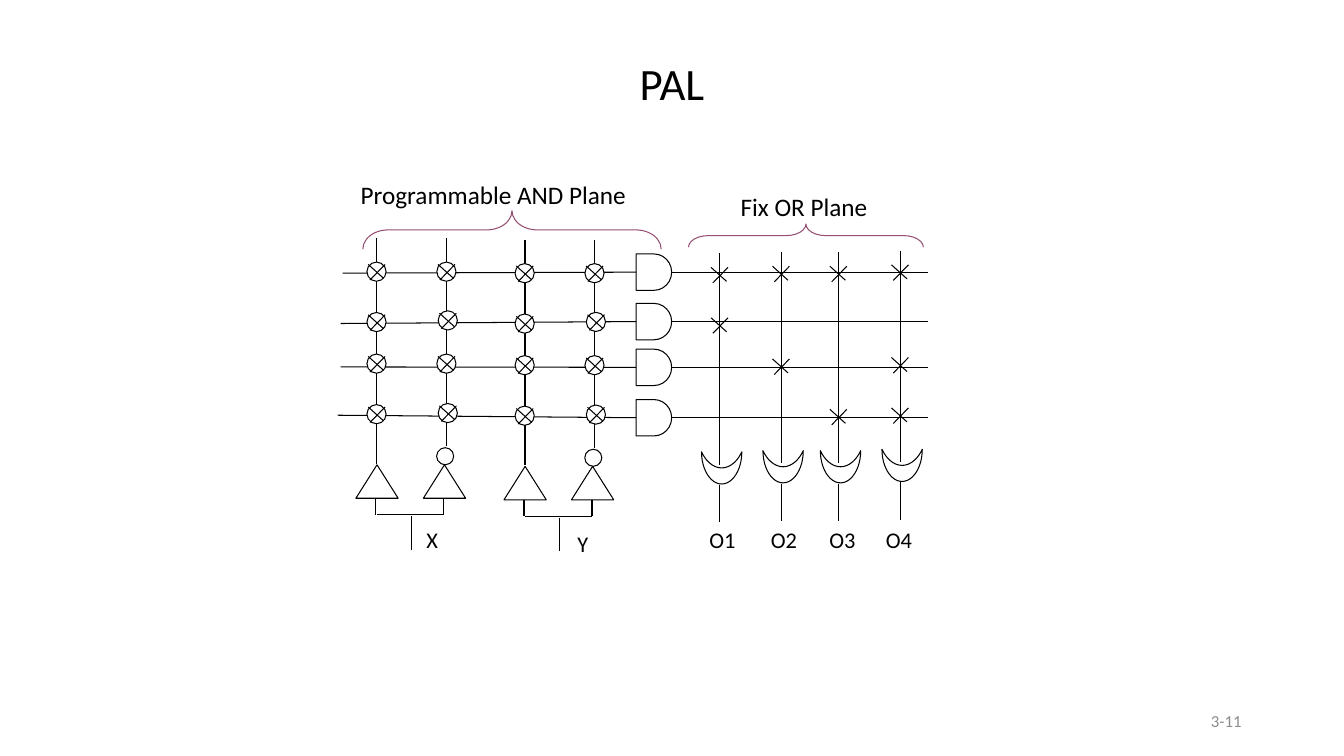
from pptx import Presentation
from pptx.dml.color import RGBColor
from pptx.enum import shapes, text
from pptx.oxml import ns
from pptx.util import Pt
from lxml import etree

BLACK, WHITE, PLUM, GREY = "000000", "FFFFFF", "954F72", "8C8C8C"
FONT = "Calibri"
KIND = shapes.MSO_SHAPE


def colour(hex_code):
    return RGBColor.from_string(hex_code)


def add_text(slide, words, left, top, width, height, size=16, fill=BLACK,
             align=text.PP_ALIGN.LEFT, anchor=text.MSO_ANCHOR.TOP, wrap=False, grow=True):
    box = slide.shapes.add_textbox(Pt(left), Pt(top), Pt(width), Pt(height))
    frame = box.text_frame
    frame.word_wrap = wrap
    frame.vertical_anchor = anchor
    if grow:
        frame.auto_size = text.MSO_AUTO_SIZE.SHAPE_TO_FIT_TEXT
    paragraph = frame.paragraphs[0]
    paragraph.alignment = align
    run = paragraph.add_run()
    run.text = words
    run.font.name, run.font.size = FONT, Pt(size)
    run.font.color.rgb = colour(fill)


def add_line(parent, x1, y1, x2, y2):
    line = parent.shapes.add_connector(shapes.MSO_CONNECTOR.STRAIGHT,
                                       Pt(x1), Pt(y1), Pt(x2), Pt(y2))
    line.line.color.rgb = colour(BLACK)
    line.line.width = Pt(0.75)
    etree.SubElement(line._element.spPr, ns.qn("a:effectLst"))
    return line


def add_symbol(parent, kind, left, top, width, height, fill=WHITE, outline=BLACK):
    shape = parent.shapes.add_shape(kind, Pt(left), Pt(top), Pt(width), Pt(height))
    shape.shadow.inherit = False
    if fill:
        shape.fill.solid()
        shape.fill.fore_color.rgb = colour(fill)
    else:
        shape.fill.background()
    shape.line.color.rgb = colour(outline)
    shape.line.width = Pt(0.75)
    return shape


def add_cross(parent, left, top):
    add_line(parent, left + 13, top + 1.7, left + 2.2, top + 12.8)
    add_line(parent, left + 0.9, top + 1.7, left + 12, top + 11.7)


def add_fuse(slide, left, top):
    group = slide.shapes.add_group_shape()
    add_symbol(group, KIND.OVAL, left, top, 13.7, 13.7)
    add_cross(group, left, top)


def add_brace(slide, left, top, width, height, curve):
    # The brace is drawn upright, then turned about its centre
    brace = add_symbol(slide, KIND.RIGHT_BRACE, left + (width - height) / 2,
                       top + (height - width) / 2, height, width, None, PLUM)
    brace.adjustments[0] = curve
    brace.rotation = 270


def add_product_rows(slide, left, right):
    """Input line, AND gate and product line of each row."""
    gate_left, gate_width, gate_height = 454.4, 25.4, 26
    rows = [(3.6, 195.1, 194.4), (2.2, 231.1, 229.7), (2.2, 262.1, 262.4), (0, 296.6, 298.4)]
    for indent, start_y, y in rows:
        gate = add_symbol(slide, KIND.FLOWCHART_DELAY, gate_left, y - gate_height / 2,
                          gate_width, gate_height)
        add_line(slide, left + indent, start_y, gate_left, y).end_connect(gate, 1)
        add_line(slide, gate_left + gate_width, y, right, y).begin_connect(gate, 3)


def add_input(slide, name, left, top, label_left, label_top):
    """True and inverted buffer of one input, with its fuses."""
    true_x, inverted_x, middle_x = left + 15, left + 64.9, left + 39.6
    for offset in (0, 48.2):
        add_symbol(slide, KIND.ISOSCELES_TRIANGLE, left + offset, top + 162, 30.2, 23.9)
    add_symbol(slide, KIND.OVAL, left + 57.7, top + 149.8, 12.2, 12.2)

    # Fork below the buffers
    for offset in (14.3, 62.9):
        add_line(slide, left + offset, top + 185.8, left + offset, top + 197.8)
    add_line(slide, true_x, top + 197.8, left + 62.9, top + 197.8)
    add_line(slide, middle_x, top + 198.7, middle_x, top + 222.8)

    # Columns and fuses
    add_line(slide, true_x, top + 161.2, true_x, top)
    add_line(slide, inverted_x, top + 148.8, inverted_x, top)
    fuse_rows = [(17.2, 17.2, 0), (53.2, 52, 1), (82.9, 82.9, 0), (119, 118.2, 1)]
    for true_top, inverted_top, shift in fuse_rows:
        add_fuse(slide, left + 7.9, top + true_top)
        add_fuse(slide, left + 57.8 + shift, top + inverted_top)
    add_text(slide, name, label_left, label_top, 23, 26.6)


def add_output(slide, name, x, top, connected_rows, label_left):
    """Column, fixed crosses and OR gate of one output."""
    add_line(slide, x, top, x, top + 151)
    gate = add_symbol(slide, KIND.MOON, x - 10.1, top + 139, 23, 28.8)
    gate.rotation = 270
    add_line(slide, x, top + 165.4, x, top + 192.3)
    cross_tops = (8.5, 44.5, 74.7, 110.7)
    for row in connected_rows:
        add_cross(slide, x - 7.1, top + cross_tops[row])
    add_text(slide, name, label_left, 372.2, 33.8, 26.6)


def add_pal_slide(presentation):
    slide = presentation.slides.add_slide(presentation.slide_layouts[6])

    # Title and page number
    add_text(slide, "PAL", 162, 36, 636, 45.4, size=32, align=text.PP_ALIGN.CENTER, wrap=True)
    add_text(slide, "3-11", 678, 500.4, 216, 28.8, size=12, fill=GREY, wrap=True, grow=False,
             align=text.PP_ALIGN.RIGHT, anchor=text.MSO_ANCHOR.MIDDLE)

    # Both planes
    add_product_rows(slide, 241.2, 663.1)
    add_input(slide, "X", 254.2, 170, 297.4, 372.2)
    add_input(slide, "Y", 360, 171.1, 405.4, 375.1)
    outputs = [("O1", 514.1, 180.8, (0, 1), 499.7), ("O2", 558, 180, (0, 2), 543.6),
               ("O3", 599, 180, (0, 3), 585.4), ("O4", 643, 179, (0, 2, 3), 625.7)]
    for output in outputs:
        add_output(slide, *output)

    # Plane headings
    add_text(slide, "Programmable AND Plane", 250.6, 124.6, 208.8, 28.8, size=18)
    add_text(slide, "Fix OR Plane", 522, 133.2, 105.8, 28.8, size=18)
    add_brace(slide, 259.2, 150.5, 213.1, 27.4, 0.66)
    add_brace(slide, 491.8, 160, 167.8, 16.6, 0.85)


def main():
    presentation = Presentation()
    presentation.slide_width, presentation.slide_height = Pt(960), Pt(540)
    add_pal_slide(presentation)
    presentation.save("out.pptx")


if __name__ == "__main__":
    main()
